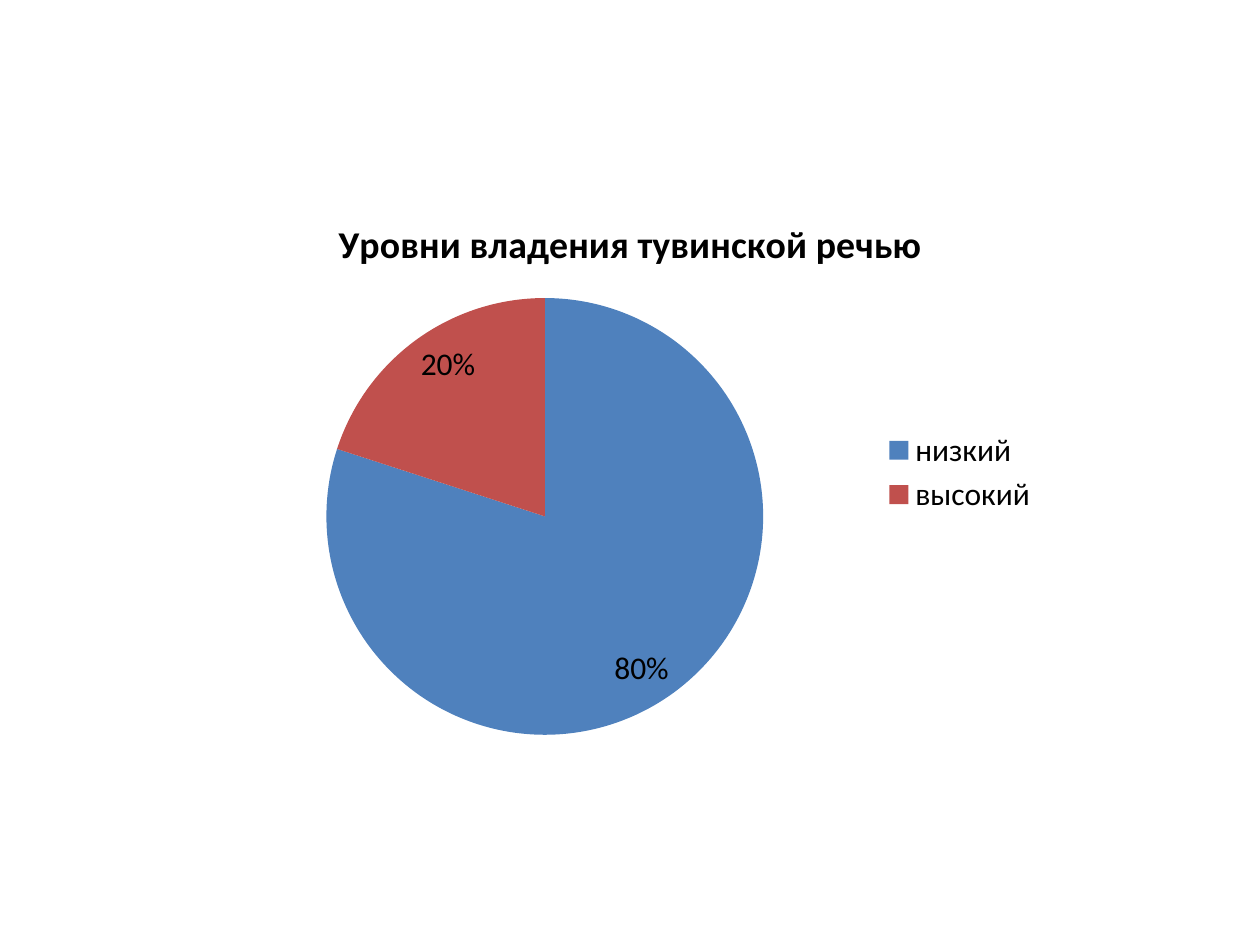
from dataclasses import dataclass

from pptx import Presentation
from pptx.chart.data import CategoryChartData as ChartData
from pptx.dml.color import RGBColor
from pptx.enum.chart import XL_CHART_TYPE as ChartType
from pptx.enum.chart import XL_LABEL_POSITION as LabelPosition
from pptx.enum.chart import XL_LEGEND_POSITION as LegendPosition
from pptx.util import Inches, Pt


@dataclass(frozen=True)
class Theme:
    font: str = "Calibri"
    text: str = "000000"
    slices: tuple = ("4F81BD", "C0504D")
    body_size: float = 18
    title_size: float = 21.6


class SlideBuilder:
    def __init__(self, slide, theme):
        self.slide = slide
        self.theme = theme

    def style_font(self, font, size, bold=False):
        font.name = self.theme.font
        font.size = Pt(size)
        font.bold = bold
        font.color.rgb = RGBColor.from_string(self.theme.text)

    def pie(self, title, shares, left, top, width, height):
        data = ChartData(number_format="0%")
        data.categories = list(shares)
        data.add_series(title, list(shares.values()))
        chart = self.slide.shapes.add_chart(
            ChartType.PIE, Inches(left), Inches(top),
            Inches(width), Inches(height), data).chart
        self.style_font(chart.font, self.theme.body_size)

        # Chart title
        chart.has_title = True
        para = chart.chart_title.text_frame.paragraphs[0]
        para.text = title
        self.style_font(para.font, self.theme.title_size, bold=True)
        chart.chart_title.include_in_layout = False

        # Legend
        chart.has_legend = True
        chart.legend.position = LegendPosition.RIGHT
        chart.legend.include_in_layout = False
        self.style_font(chart.legend.font, self.theme.body_size)

        # Slices and their labels
        plot = chart.plots[0]
        plot.vary_by_categories = True
        for index, color in enumerate(self.theme.slices):
            fill = plot.series[0].points[index].format.fill
            fill.solid()
            fill.fore_color.rgb = RGBColor.from_string(color)
        plot.has_data_labels = True
        labels = plot.data_labels
        labels.show_value = True
        labels.number_format = "0%"
        labels.number_format_is_linked = False
        labels.position = LabelPosition.INSIDE_END
        self.style_font(labels.font, self.theme.body_size)


def main():
    deck = Presentation()
    deck.slide_width, deck.slide_height = Inches(10), Inches(7.5)
    blank_layout = deck.slide_layouts[6]
    page = SlideBuilder(deck.slides.add_slide(blank_layout), Theme())

    # Language proficiency levels
    page.pie("Уровни владения тувинской речью",
             {"низкий": 0.8, "высокий": 0.2},
             left=1.67, top=1.53, width=6.67, height=4.44)
    deck.save("out.pptx")


if __name__ == "__main__":
    main()
